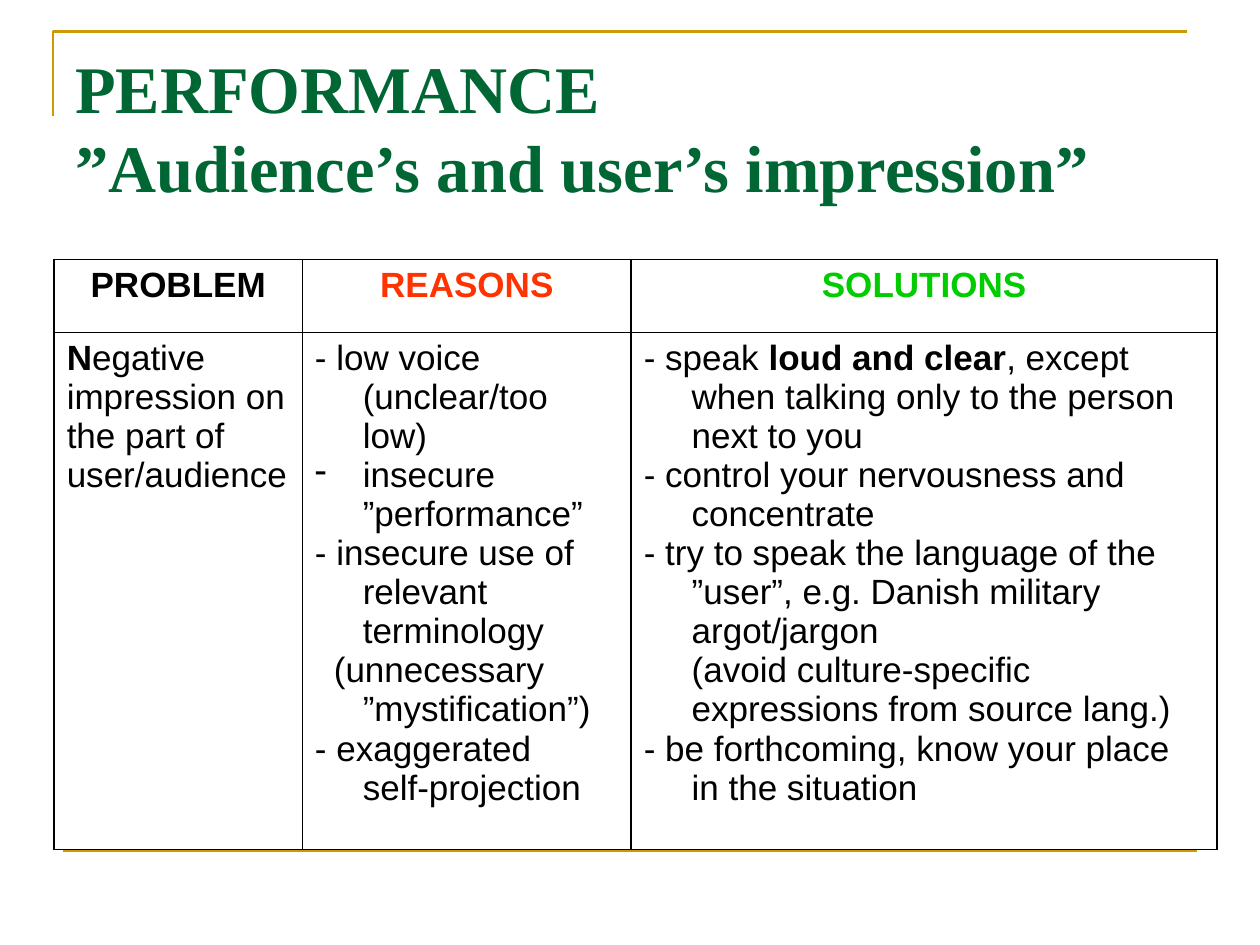
from lxml.etree import SubElement
from pptx import Presentation
from pptx.dml.color import RGBColor
from pptx.enum.shapes import MSO_CONNECTOR
from pptx.enum.text import MSO_ANCHOR, PP_ALIGN
from pptx.oxml.ns import qn
from pptx.util import Inches, Pt

COLORS = {"gold": "CC9900", "title": "006633", "text": "000000",
          "reasons": "FF3300", "solutions": "00CC00"}
HANG = 0.38


def add_run(paragraph, text, font, size, color, bold):
    """Add text as runs, with a line break at each newline."""
    for i, line in enumerate(text.split("\n")):
        if i:
            paragraph.add_line_break()
        run = paragraph.add_run()
        run.text = line
        run.font.name = font
        run.font.size = Pt(size)
        run.font.bold = bold
        run.font.color.rgb = RGBColor.from_string(COLORS[color])


def set_borders(cell):
    """Draw a 1 pt black line on every side of the cell."""
    properties = cell._tc.get_or_add_tcPr()
    for side in ("lnL", "lnR", "lnT", "lnB"):
        line = SubElement(properties, qn(f"a:{side}"), w=str(Pt(1)))
        fill = SubElement(line, qn("a:solidFill"))
        SubElement(fill, qn("a:srgbClr"), val=COLORS["text"])


prs = Presentation()
prs.slide_width, prs.slide_height = Inches(10), Inches(7.5)
slide = prs.slides.add_slide(prs.slide_layouts[6])

# Gold corner at the top and rule at the bottom
builder = slide.shapes.build_freeform(Inches(0.42), Inches(0.92))
builder.add_line_segments([(Inches(0.42), Inches(0.25)),
                           (Inches(9.42), Inches(0.25))], close=False)
corner = builder.convert_to_shape()
corner.fill.background()
corner.shadow.inherit = False
rule = slide.shapes.add_connector(MSO_CONNECTOR.STRAIGHT, Inches(0.5), Inches(6.75),
                                  Inches(9.5), Inches(6.75))
SubElement(rule._element.spPr, qn("a:effectLst"))
for gold_line in (corner.line, rule.line):
    gold_line.color.rgb = RGBColor.from_string(COLORS["gold"])
    gold_line.width = Pt(1.5)

# Title
title = slide.shapes.add_textbox(Inches(0.5), Inches(0.3), Inches(9), Inches(1.25)).text_frame
title.word_wrap = True
title.vertical_anchor = MSO_ANCHOR.TOP
title.margin_top = Inches(0.08)
heading = title.paragraphs[0]
heading.line_spacing = Pt(45)
add_run(heading, "PERFORMANCE\n”Audience’s and user’s impression”",
        "Times New Roman", 38, "title", True)

# Table content: each paragraph is a list of (text, bold) runs
headers = [("PROBLEM", "text"), ("REASONS", "reasons"), ("SOLUTIONS", "solutions")]
problem = [
    [("N", True), ("egative", False)],
    [("impression on", False)],
    [("the part of", False)],
    [("user/audience", False)],
]
reasons = [
    [("- low voice (unclear/too low)", False)],
    [("insecure ”performance”", False)],
    [("- insecure use of relevant terminology", False)],
    [("(unnecessary ”mystification”)", False)],
    [("- exaggerated\nself-projection", False)],
]
solutions = [
    [("- speak ", False), ("loud and clear", True),
     (", except when talking only to the person next to you", False)],
    [("- control your nervousness and concentrate", False)],
    [("- try to speak the language of the ”user”, e.g. Danish military argot/jargon\n"
      "(avoid culture-specific expressions from source lang.)", False)],
    [("- be forthcoming, know your place in the situation", False)],
]
bulleted, shifted = reasons[1], reasons[3]

# Table
column_widths, row_heights = [1.97, 2.61, 4.65], [0.58, 4.02]
table = slide.shapes.add_table(2, 3, Inches(0.43), Inches(2.06), Inches(sum(column_widths)),
                               Inches(sum(row_heights))).table
table.first_row = table.horz_banding = False
for column, width in zip(table.columns, column_widths):
    column.width = Inches(width)
for row, height in zip(table.rows, row_heights):
    row.height = Inches(height)

for col, ((label, label_color), body) in enumerate(zip(headers, (problem, reasons, solutions))):
    for row, paragraphs in enumerate(([[(label, True)]], body)):
        cell = table.cell(row, col)
        set_borders(cell)
        cell.fill.background()
        for i, runs in enumerate(paragraphs):
            frame = cell.text_frame
            paragraph = frame.paragraphs[0] if i == 0 else frame.add_paragraph()
            paragraph.alignment = PP_ALIGN.CENTER if row == 0 else PP_ALIGN.LEFT
            # Hanging indent, less deep for the bracketed remark
            indent = -0.23 if runs is shifted else -HANG
            layout = paragraph._p.get_or_add_pPr()
            layout.set("marL", str(Inches(HANG)))
            layout.set("indent", str(Inches(indent)))
            if runs is bulleted:
                SubElement(layout, qn("a:buChar"), char="-")
            for text, bold in runs:
                add_run(paragraph, text, "Arial", 20, label_color if row == 0 else "text", bold)

prs.save("out.pptx")
